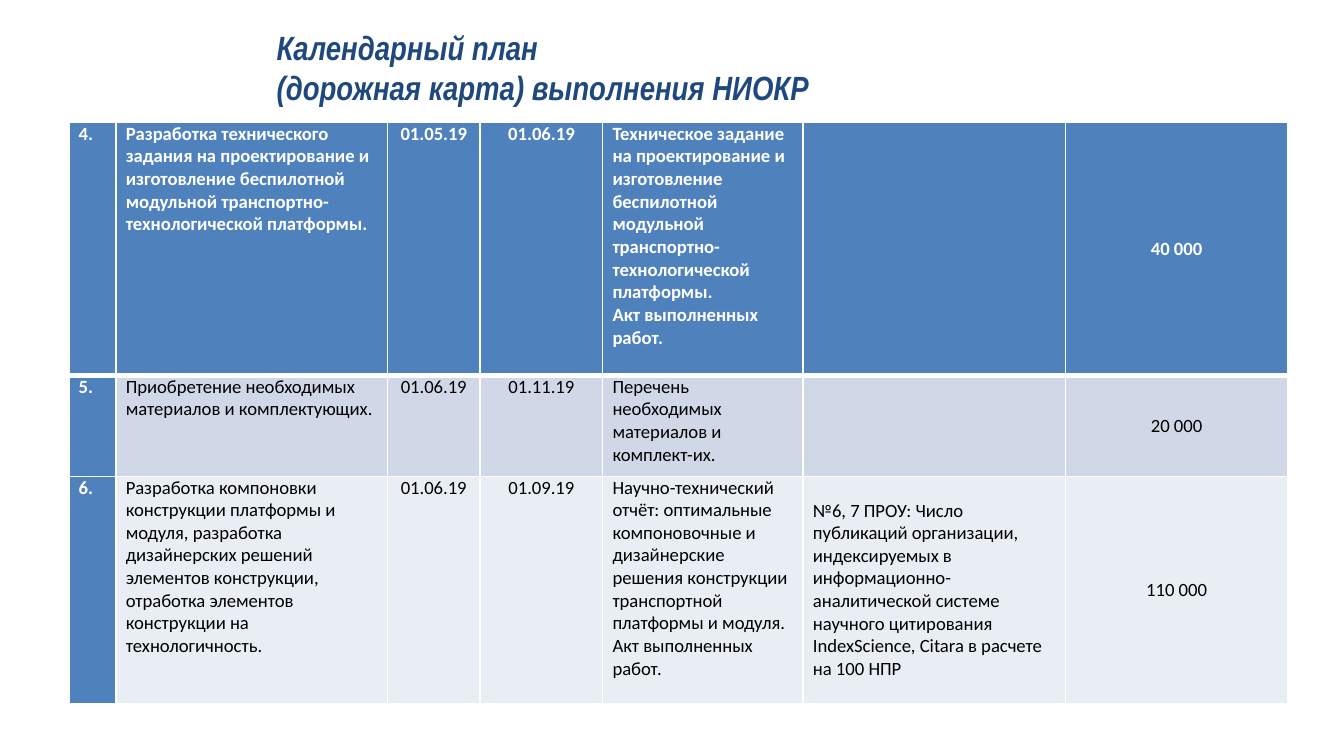
import copy

import lxml.etree
import pptx
import pptx.dml.color
import pptx.enum.text
import pptx.oxml.ns
import pptx.util

Pt = pptx.util.Pt
ALIGN = pptx.enum.text.PP_ALIGN
ANCHOR = pptx.enum.text.MSO_ANCHOR
qn = pptx.oxml.ns.qn

COLORS = {
    "title": "1F497D",
    "header": "4F81BD",
    "band_dark": "D0D8E8",
    "band_light": "E9EDF4",
    "white": "FFFFFF",
    "black": "000000",
}

COLUMN_WIDTHS = [25.2, 145.4, 49.7, 65.7, 107.4, 140.6, 118.9]
ROW_HEIGHTS = [135.5, 54, 121.7]
CENTERED_COLUMNS = {2, 3, 6}
MIDDLE_COLUMNS = {5, 6}

# Stage number, work, start, end, result, indicator, cost
STAGES = [
    ["4.",
     "Разработка технического задания на проектирование и изготовление "
     "беспилотной модульной транспортно-технологической платформы.",
     "01.05.19", "01.06.19",
     "Техническое задание на проектирование и изготовление беспилотной "
     "модульной транспортно-технологической платформы.\nАкт выполненных работ.",
     "", "40 000"],
    ["5.",
     "Приобретение необходимых материалов и комплектующих.",
     "01.06.19", "01.11.19",
     "Перечень необходимых материалов и комплект-их.",
     "", "20 000"],
    ["6.",
     "Разработка компоновки конструкции платформы и модуля, разработка "
     "дизайнерских решений элементов конструкции, отработка элементов "
     "конструкции на технологичность.",
     "01.06.19", "01.09.19",
     "Научно-технический отчёт: оптимальные компоновочные и дизайнерские "
     "решения конструкции транспортной платформы и модуля.\n"
     "Акт выполненных работ.",
     "№6, 7 ПРОУ: Число публикаций организации, индексируемых в "
     "информационно-аналитической системе научного цитирования "
     "IndexScience, Citara в расчете на 100 НПР",
     "110 000"],
]


def color(name):
    return pptx.dml.color.RGBColor.from_string(COLORS[name])


def write_text(frame, text, *, font, size, fill, bold=False, italic=False,
               align=ALIGN.LEFT):
    """Newlines start paragraphs; vertical tabs break lines."""
    frame.text = text
    for paragraph in frame.paragraphs:
        paragraph.alignment = align
        for run in paragraph.runs:
            run.font.name = font
            run.font.size = Pt(size)
            run.font.bold = bold
            run.font.italic = italic
            run.font.color.rgb = color(fill)
        # Line breaks take the format of the text around them
        for line_break in paragraph._p.findall(qn("a:br")):
            line_break.append(copy.deepcopy(paragraph.runs[0].font._element))


class RoadmapSlide:
    title_font = "Arial Narrow"
    body_font = "Calibri"

    def __init__(self, presentation):
        self.slide = presentation.slides.add_slide(presentation.slide_layouts[5])

    def title(self, text, left, top, width, height):
        shape = self.slide.shapes.title
        shape.left, shape.top = Pt(left), Pt(top)
        shape.width, shape.height = Pt(width), Pt(height)
        frame = shape.text_frame
        frame.word_wrap = True
        frame.auto_size = pptx.enum.text.MSO_AUTO_SIZE.SHAPE_TO_FIT_TEXT
        frame.vertical_anchor = ANCHOR.TOP
        write_text(frame, text, font=self.title_font, size=18, fill="title",
                   bold=True, italic=True)

    def borders(self, cell, bottom=1, top=1):
        properties = cell._tc.get_or_add_tcPr()
        widths = {"lnL": 1, "lnR": 1, "lnT": top, "lnB": bottom}
        for index, (side, width) in enumerate(widths.items()):
            line = lxml.etree.Element(qn(f"a:{side}"), w=str(Pt(width)))
            fill = lxml.etree.SubElement(line, qn("a:solidFill"))
            lxml.etree.SubElement(fill, qn("a:srgbClr"), val=COLORS["white"])
            properties.insert(index, line)

    def cell(self, cell, text, row, column):
        emphasized = row == 0 or column == 0
        band = "band_dark" if row % 2 else "band_light"
        cell.fill.solid()
        cell.fill.fore_color.rgb = color("header" if emphasized else band)
        cell.margin_left = cell.margin_right = Pt(5.3)
        cell.margin_top = cell.margin_bottom = 0
        cell.vertical_anchor = ANCHOR.MIDDLE if column in MIDDLE_COLUMNS else ANCHOR.TOP
        self.borders(cell, bottom=3 if row == 0 else 1, top=3 if row == 1 else 1)
        if text:
            write_text(cell.text_frame, text, font=self.body_font, size=10,
                       fill="white" if emphasized else "black", bold=emphasized,
                       align=ALIGN.CENTER if column in CENTERED_COLUMNS else ALIGN.LEFT)

    def table(self, rows, left, top):
        table = self.slide.shapes.add_table(
            len(rows), len(COLUMN_WIDTHS), Pt(left), Pt(top),
            Pt(sum(COLUMN_WIDTHS)), Pt(sum(ROW_HEIGHTS))).table
        table.first_col = True
        for column, width in zip(table.columns, COLUMN_WIDTHS):
            column.width = Pt(width)
        for row, height in zip(table.rows, ROW_HEIGHTS):
            row.height = Pt(height)
        for row, texts in enumerate(rows):
            for column, text in enumerate(texts):
                self.cell(table.cell(row, column), text, row, column)


def main():
    presentation = pptx.Presentation()
    presentation.slide_width, presentation.slide_height = Pt(720), Pt(405)
    roadmap = RoadmapSlide(presentation)

    # Heading
    roadmap.title("Календарный план\v(дорожная карта) выполнения НИОКР",
                  141, 10.8, 360, 51)

    # Stages of the work
    roadmap.table(STAGES, 36.9, 65.7)

    presentation.save("out.pptx")


if __name__ == "__main__":
    main()
